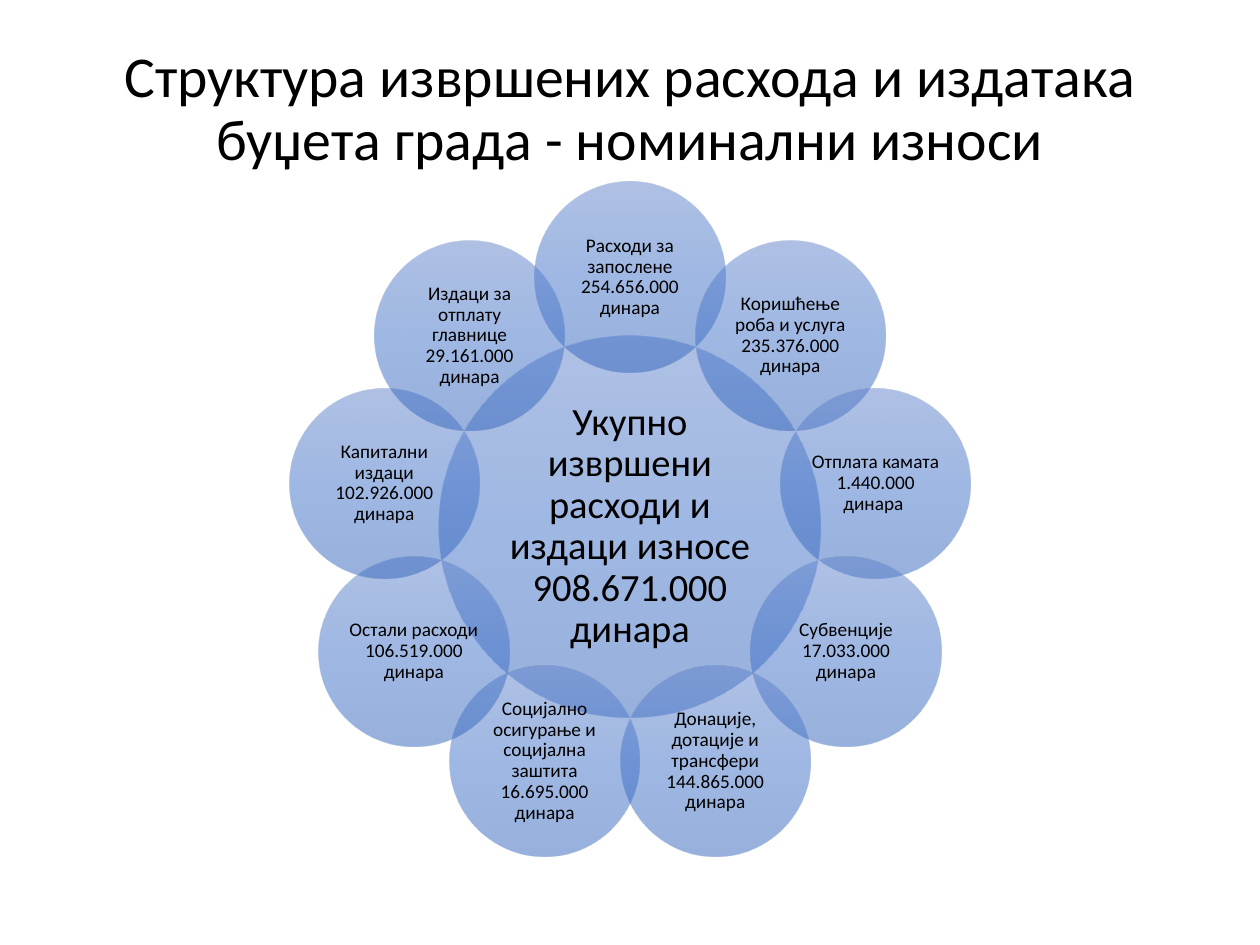
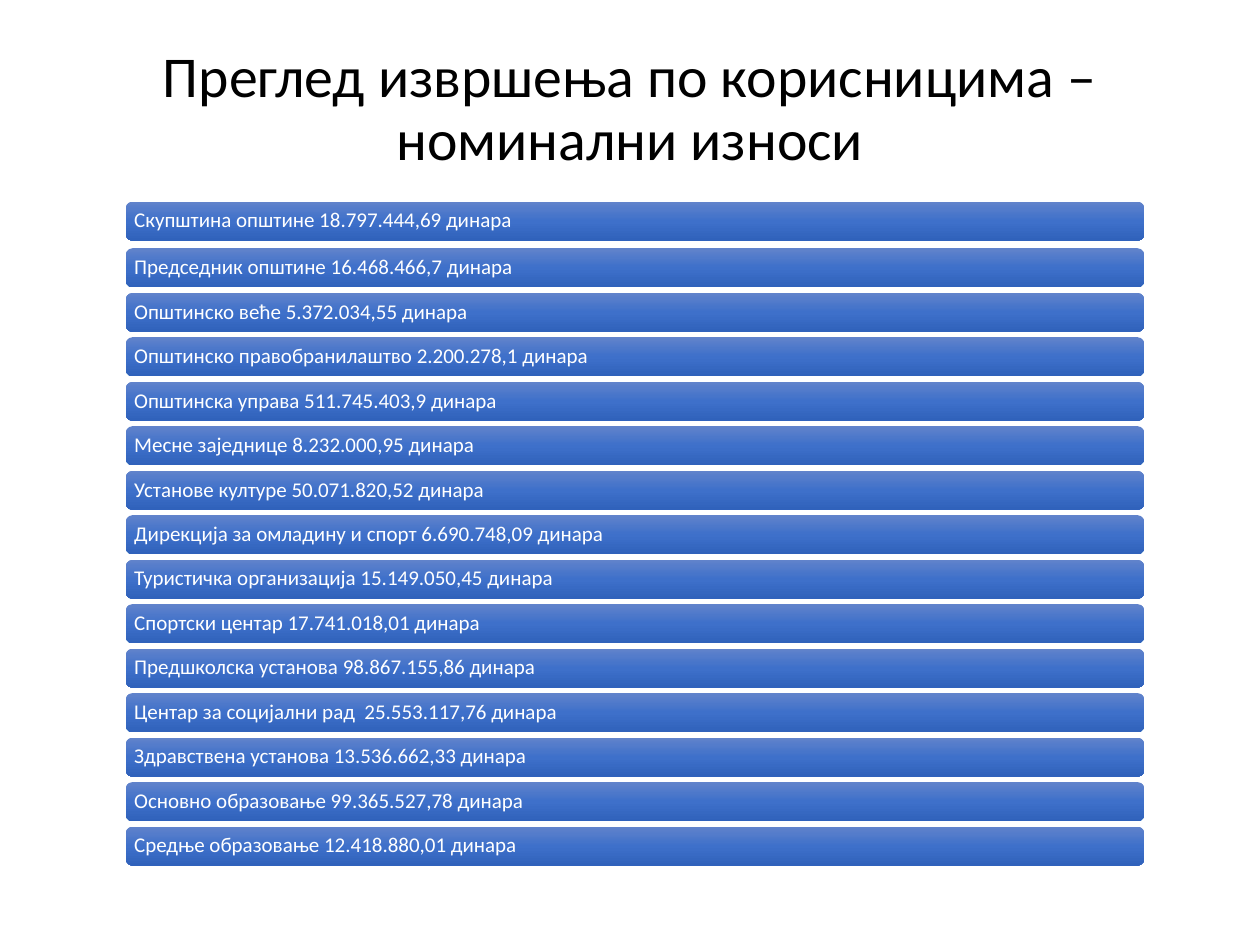
from dataclasses import dataclass
from math import cos, radians, sin

from lxml.etree import SubElement
from pptx import Presentation
from pptx.dml.color import RGBColor
from pptx.enum.shapes import MSO_SHAPE as Shape
from pptx.enum.text import MSO_ANCHOR as Anchor, PP_ALIGN as Align
from pptx.oxml.ns import qn
from pptx.util import Inches, Pt

FONT = "Calibri"
BLACK, WHITE = "000000", "FFFFFF"
BLUES = {0: "6183CB", 50: "3E70CA", 100: "3062BB"}

# Flower of circles
MID_X, MID_Y = 5, 4.18
CORE, PETAL, RING = 3.03, 1.51, 1.98
TOTAL = "Укупно извршени расходи и издаци износе 908.671.000 динара"
COSTS = [
    "Расходи за запослене 254.656.000 динара",
    "Коришћење роба и услуга 235.376.000 динара",
    "Отплата камата 1.440.000 динара ",
    "Субвенције 17.033.000 динара",
    "Донације, дотације и трансфери 144.865.000 динара",
    "Социјално осигурање и социјална заштита 16.695.000 динара",
    "Остали расходи 106.519.000 динара",
    "Капитални издаци 102.926.000 динара",
    "Издаци за отплату главнице 29.161.000 динара",
]

# Stack of bars: the first stands a little apart from the even rest
BAR_X, BAR_W, BAR_H = 1, 8.08, 0.31
HEAD_Y, FIRST_Y, LAST_Y = 1.6, 1.97, 6.56
USERS = [
    "Скупштина општине 18.797.444,69 динара",
    "Председник oпштине 16.468.466,7 динара",
    "Општинско веће 5.372.034,55 динара",
    "Општинско правобранилаштво 2.200.278,1 динара",
    "Општинска управа 511.745.403,9 динара",
    "Месне заједнице 8.232.000,95 динара",
    "Установе културе 50.071.820,52 динара",
    "Дирекција за омладину и спорт 6.690.748,09 динара",
    "Туристичка организација 15.149.050,45 динара",
    "Спортски центар 17.741.018,01 динара",
    "Предшколска установа 98.867.155,86 динара",
    "Центар за социјални рад  25.553.117,76 динара",
    "Здравствена установа 13.536.662,33 динара",
    "Основно образовање 99.365.527,78 динара",
    "Средње образовање 12.418.880,01 динара",
]


@dataclass
class Box:
    left: float
    top: float
    width: float
    height: float

    def place(self) -> tuple:
        return tuple(Inches(v) for v in (self.left, self.top, self.width, self.height))


@dataclass
class Style:
    size: float
    color: str = BLACK
    align: Align = Align.CENTER
    pad_x: float = 0.01
    pad_y: float = 0.01
    alpha: int = 50


CORE_STYLE = Style(22, pad_x=0.03, pad_y=0.03)
PETAL_STYLE = Style(11)
BAR_STYLE = Style(12, WHITE, Align.LEFT, pad_x=0.05, alpha=100)


def color(code: str) -> RGBColor:
    return RGBColor.from_string(code)


def write(shape, text: str, *, size: float, tint: str = BLACK, align=Align.CENTER,
          anchor=Anchor.MIDDLE, pad_x: float = 0.1, pad_y: float = 0.05) -> None:
    frame = shape.text_frame
    frame.word_wrap = True
    frame.vertical_anchor = anchor
    frame.margin_left = frame.margin_right = Inches(pad_x)
    frame.margin_top = frame.margin_bottom = Inches(pad_y)
    para = frame.paragraphs[0]
    para.alignment = align
    para.line_spacing = 0.9
    run = para.add_run()
    run.text = text
    run.font.name = FONT
    run.font.size = Pt(size)
    run.font.color.rgb = color(tint)


def shade(shape, alpha: int) -> None:
    """Fill from top to bottom with the blues, at alpha percent opacity."""
    shape.fill.gradient()
    shape.fill.gradient_angle = 270
    stops = shape._element.spPr.find(qn("a:gradFill")).find(qn("a:gsLst"))
    stops.clear()
    for pos, code in BLUES.items():
        stop = SubElement(stops, qn("a:gs"), pos=str(pos * 1000))
        tint = SubElement(stop, qn("a:srgbClr"), val=str(color(code)))
        if alpha < 100:
            SubElement(tint, qn("a:alpha"), val=str(alpha * 1000))


def draw(slide, kind: Shape, box: Box, text: str, style: Style) -> None:
    shape = slide.shapes.add_shape(kind, *box.place())
    shape.shadow.inherit = False
    shape.line.fill.background()
    shade(shape, style.alpha)
    write(shape, text, size=style.size, tint=style.color, align=style.align,
          pad_x=style.pad_x, pad_y=style.pad_y)


def disc(slide, x: float, y: float, width: float, text: str, style: Style) -> None:
    """Draw a circle around the point x, y."""
    box = Box(x - width / 2, y - width / 2, width, width)
    draw(slide, Shape.OVAL, box, text, style)


def start(deck, title: str):
    """Add a blank slide with its title."""
    slide = deck.slides.add_slide(deck.slide_layouts[6])
    head = slide.shapes.add_textbox(*Box(0.3, 0.25, 9.4, 1.17).place())
    write(head, title, size=33, anchor=Anchor.BOTTOM)
    return slide


def flower(deck) -> None:
    slide = start(deck, "Структура извршених расхода и издатака буџета града - номинални износи")
    disc(slide, MID_X, MID_Y, CORE, TOTAL, CORE_STYLE)
    for i, cost in enumerate(COSTS):
        turn = radians(360 * i / len(COSTS))
        disc(slide, MID_X + RING * sin(turn), MID_Y - RING * cos(turn),
             PETAL, cost, PETAL_STYLE)


def stack(deck) -> None:
    slide = start(deck, "Преглед извршења по корисницима – номинални износи")
    step = (LAST_Y - FIRST_Y) / (len(USERS) - 2)
    tops = [HEAD_Y] + [FIRST_Y + step * i for i in range(len(USERS) - 1)]
    for top, user in zip(tops, USERS):
        draw(slide, Shape.ROUNDED_RECTANGLE, Box(BAR_X, top, BAR_W, BAR_H), user, BAR_STYLE)


def main() -> None:
    deck = Presentation()
    deck.slide_width, deck.slide_height = Inches(10), Inches(7.5)
    flower(deck)
    stack(deck)
    deck.save("out.pptx")


if __name__ == "__main__":
    main()
